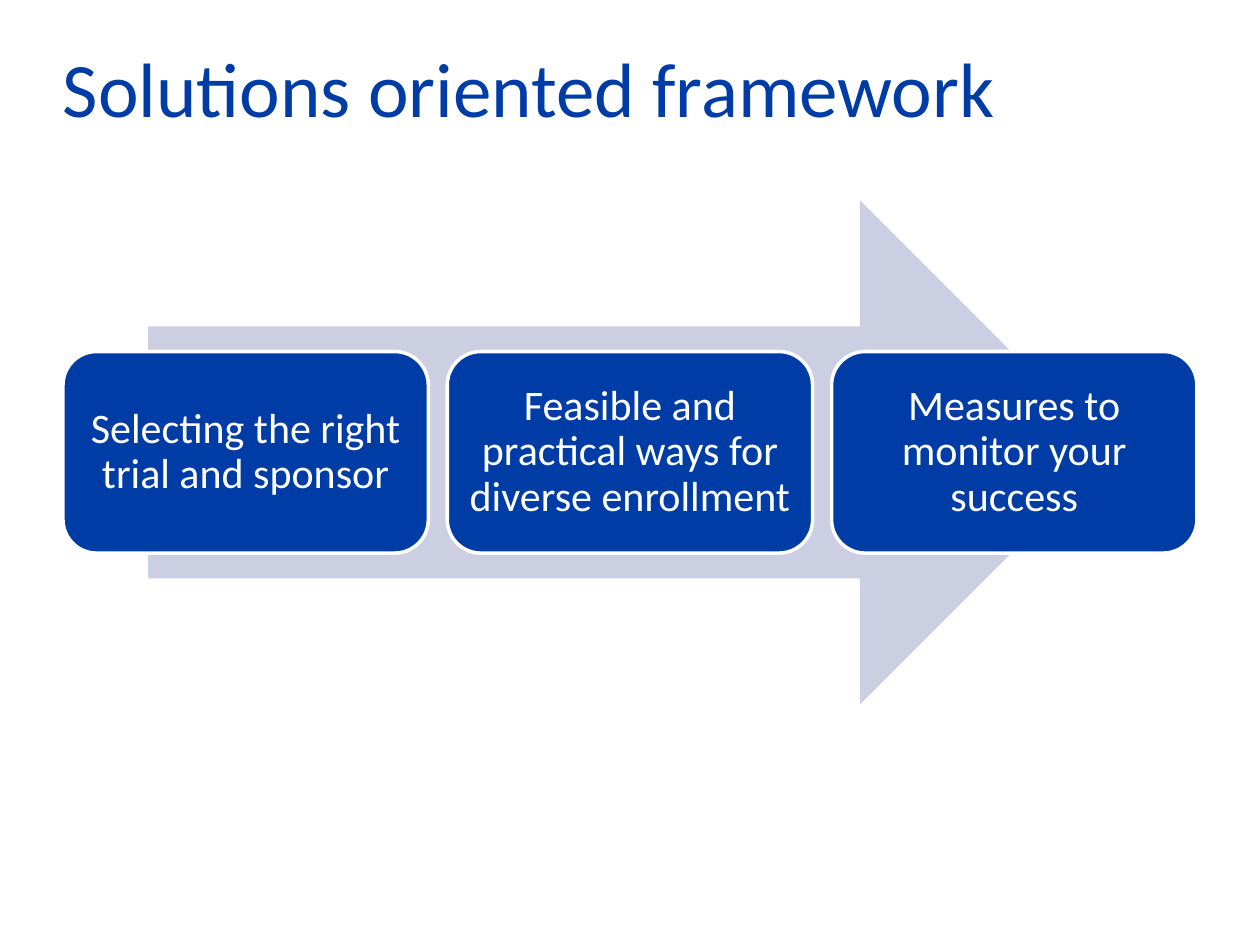
import pptx
import pptx.util
import pptx.dml.color
import pptx.enum.shapes
import pptx.enum.text

COLORS = {"blue": "003CA5", "lavender": "CCCEE1", "white": "FFFFFF"}
Inches = pptx.util.Inches
Shapes = pptx.enum.shapes.MSO_SHAPE
Align = pptx.enum.text.PP_ALIGN


def rgb(name):
    return pptx.dml.color.RGBColor.from_string(COLORS[name])


def write_text(shape, text, size, color, alignment, margin):
    frame = shape.text_frame
    frame.text = text
    frame.word_wrap = True
    frame.vertical_anchor = pptx.enum.text.MSO_ANCHOR.MIDDLE
    frame.margin_left = frame.margin_right = Inches(margin)
    frame.margin_top = frame.margin_bottom = Inches(margin)
    paragraph = frame.paragraphs[0]
    paragraph.alignment = alignment
    paragraph.line_spacing = 0.9
    font = paragraph.runs[0].font
    font.name = "Calibri"
    font.size = pptx.util.Pt(size)
    font.color.rgb = rgb(color)


presentation = pptx.Presentation()
presentation.slide_width = Inches(10)
presentation.slide_height = Inches(7.5)
slide = presentation.slides.add_slide(presentation.slide_layouts[6])

# Content column and vertical centre shared by the arrow and the steps
left, width = 0.5, 9
middle = 3.59

# Title
title = slide.shapes.add_textbox(Inches(left), Inches(0.3), Inches(width), Inches(0.87))
write_text(title, "Solutions oriented framework", 44, "blue", Align.LEFT, 0)

# Background arrow, 85% of the content width
arrow_width, arrow_height = width * 0.85, 4
arrow = slide.shapes.add_shape(
    Shapes.RIGHT_ARROW,
    Inches(left + (width - arrow_width) / 2), Inches(middle - arrow_height / 2),
    Inches(arrow_width), Inches(arrow_height))
arrow.shadow.inherit = False
arrow.fill.solid()
arrow.fill.fore_color.rgb = rgb("lavender")
arrow.line.fill.background()

# Three steps with equal gaps
steps = [
    "Selecting the right trial and sponsor",
    "Feasible and practical ways for diverse enrollment",
    "Measures to monitor your success",
]
gap, step_height = 0.15, 1.6
step_width = (width - gap * (len(steps) - 1)) / len(steps)
for column, text in enumerate(steps):
    step = slide.shapes.add_shape(
        Shapes.ROUNDED_RECTANGLE,
        Inches(left + column * (step_width + gap)), Inches(middle - step_height / 2),
        Inches(step_width), Inches(step_height))
    step.shadow.inherit = False
    step.fill.solid()
    step.fill.fore_color.rgb = rgb("blue")
    step.line.color.rgb = rgb("white")
    step.line.width = pptx.util.Pt(2)
    write_text(step, text, 24, "white", Align.CENTER, 0.1)

presentation.save("out.pptx")
